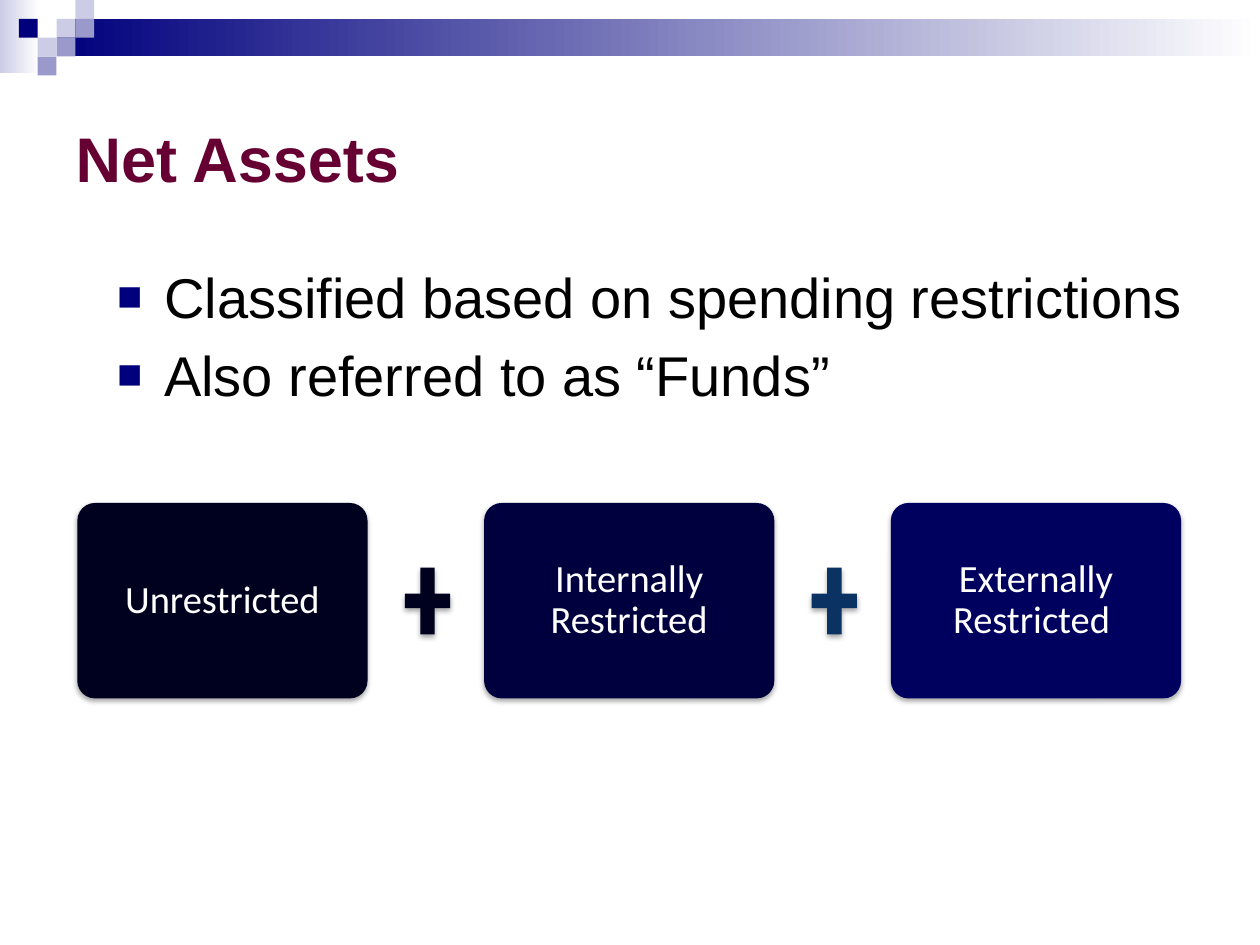
from lxml import etree
from pptx import Presentation
from pptx.dml.color import RGBColor
from pptx.enum.shapes import MSO_SHAPE
from pptx.enum.text import MSO_ANCHOR, MSO_AUTO_SIZE, PP_ALIGN
from pptx.util import Cm, Pt

RECTANGLE = MSO_SHAPE.RECTANGLE
ROUNDED = MSO_SHAPE.ROUNDED_RECTANGLE
PLUS = MSO_SHAPE.MATH_PLUS
MIDDLE = MSO_ANCHOR.MIDDLE
NO_AUTOFIT = MSO_AUTO_SIZE.NONE
LEFT, CENTER = PP_ALIGN.LEFT, PP_ALIGN.CENTER
NAVY, LILAC, VIOLET, WHITE = "00007D", "CCCCE6", "9999CC", "FFFFFF"
DRAWING = "http://schemas.openxmlformats.org/drawingml/2006/main"
SOFT_SHADOW = (
    f'<a:effectLst xmlns:a="{DRAWING}">'
    '<a:outerShdw blurRad="39370" dist="22860" dir="5400000" rotWithShape="0">'
    '<a:srgbClr val="000000"><a:alpha val="35000"/></a:srgbClr>'
    '</a:outerShdw></a:effectLst>')
SQUARE_BULLET = (
    f'<a:buClr xmlns:a="{DRAWING}"><a:srgbClr val="{NAVY}"/></a:buClr>',
    f'<a:buSzPct xmlns:a="{DRAWING}" val="75000"/>',
    f'<a:buFont xmlns:a="{DRAWING}" typeface="Arial"/>',
    f'<a:buChar xmlns:a="{DRAWING}" char="■"/>')


def color(value):
    return RGBColor.from_string(value)


def add_block(kind, left, top, width, height, *fills, soft_shadow=False):
    """Borderless shape; two fills make a left-to-right gradient."""
    block = slide.shapes.add_shape(kind, Cm(left), Cm(top), Cm(width), Cm(height))
    block.line.fill.background()
    block.shadow.inherit = False
    if len(fills) == 1:
        block.fill.solid()
        block.fill.fore_color.rgb = color(fills[0])
    else:
        block.fill.gradient()
        block.fill.gradient_angle = 0
        for stop, value in zip(block.fill.gradient_stops, fills):
            stop.color.rgb = color(value)
    if soft_shadow:
        properties = block.fill._xPr
        empty_effects = properties.find(f"{{{DRAWING}}}effectLst")
        properties.replace(empty_effects, etree.fromstring(SOFT_SHADOW))
    return block


deck = Presentation()
deck.slide_width, deck.slide_height = Cm(25.4), Cm(19.05)
slide = deck.slides.add_slide(deck.slide_layouts[5])

# Header band with checkered corner
add_block(RECTANGLE, 0, 0, 0.8, 1.47, LILAC, WHITE)
add_block(RECTANGLE, 1.14, 0.38, 24.26, 0.76, NAVY, WHITE)
tile = 0.38
for column, row, fill in ((3, 1, LILAC), (4, 0, LILAC), (4, 1, VIOLET), (2, 2, LILAC),
                          (1, 1, NAVY), (3, 2, VIOLET), (2, 3, VIOLET)):
    add_block(RECTANGLE, column * tile, row * tile, tile, tile, fill)

# Title
title = slide.shapes.title
title.left, title.top, title.width, title.height = Cm(1.27), Cm(1.27), Cm(22.86), Cm(3.81)
title.text_frame.text = "Net Assets"
title.text_frame.auto_size = NO_AUTOFIT
title.text_frame.vertical_anchor = MIDDLE
heading = title.text_frame.paragraphs[0]
heading.alignment = LEFT
heading.font.name, heading.font.size, heading.font.bold = "Arial", Pt(36), True
heading.font.color.rgb = color("660033")

# Bulleted points
points = slide.shapes.add_textbox(Cm(2.11), Cm(5.16), Cm(22.35), Cm(3.3)).text_frame
points.word_wrap = True
points.text = "Classified based on spending restrictions\nAlso referred to as “Funds”"
for point in points.paragraphs:
    point.space_before = Pt(6.4)
    point.font.name, point.font.size = "Arial", Pt(32)
    point.font.color.rgb = color("000000")
    layout = point._p.get_or_add_pPr()
    layout.set("marL", str(Cm(0.95)))
    layout.set("indent", str(Cm(-0.95)))
    for position, part in enumerate(SQUARE_BULLET, start=1):  # after a:spcBef
        layout.insert(position, etree.fromstring(part))

# Fund classes joined by plus signs
first_left, pitch = 1.56, 8.2
funds = (("Unrestricted", "00001F", "00001F"),
         ("Internally Restricted", "00003E", "0A3363"),
         ("Externally Restricted ", "00005E", None))
for index, (label, fill, plus_fill) in enumerate(funds):
    left = first_left + index * pitch
    fund = add_block(ROUNDED, left, 10.14, 5.85, 3.94, fill, soft_shadow=True)
    fund.adjustments[0] = 0.09
    frame = fund.text_frame
    frame.text = label
    frame.word_wrap = True
    frame.vertical_anchor = MIDDLE
    frame.margin_left = frame.margin_right = Cm(0.3)
    frame.margin_top = frame.margin_bottom = Cm(0.3)
    caption = frame.paragraphs[0]
    caption.alignment = CENTER
    caption.line_spacing = 0.9
    caption.font.name, caption.font.size = "Calibri", Pt(22)
    caption.font.color.rgb = color(WHITE)
    if plus_fill:
        add_block(PLUS, left + 6.44, 11.2, 1.24, 1.83, plus_fill, soft_shadow=True)

deck.save("out.pptx")
